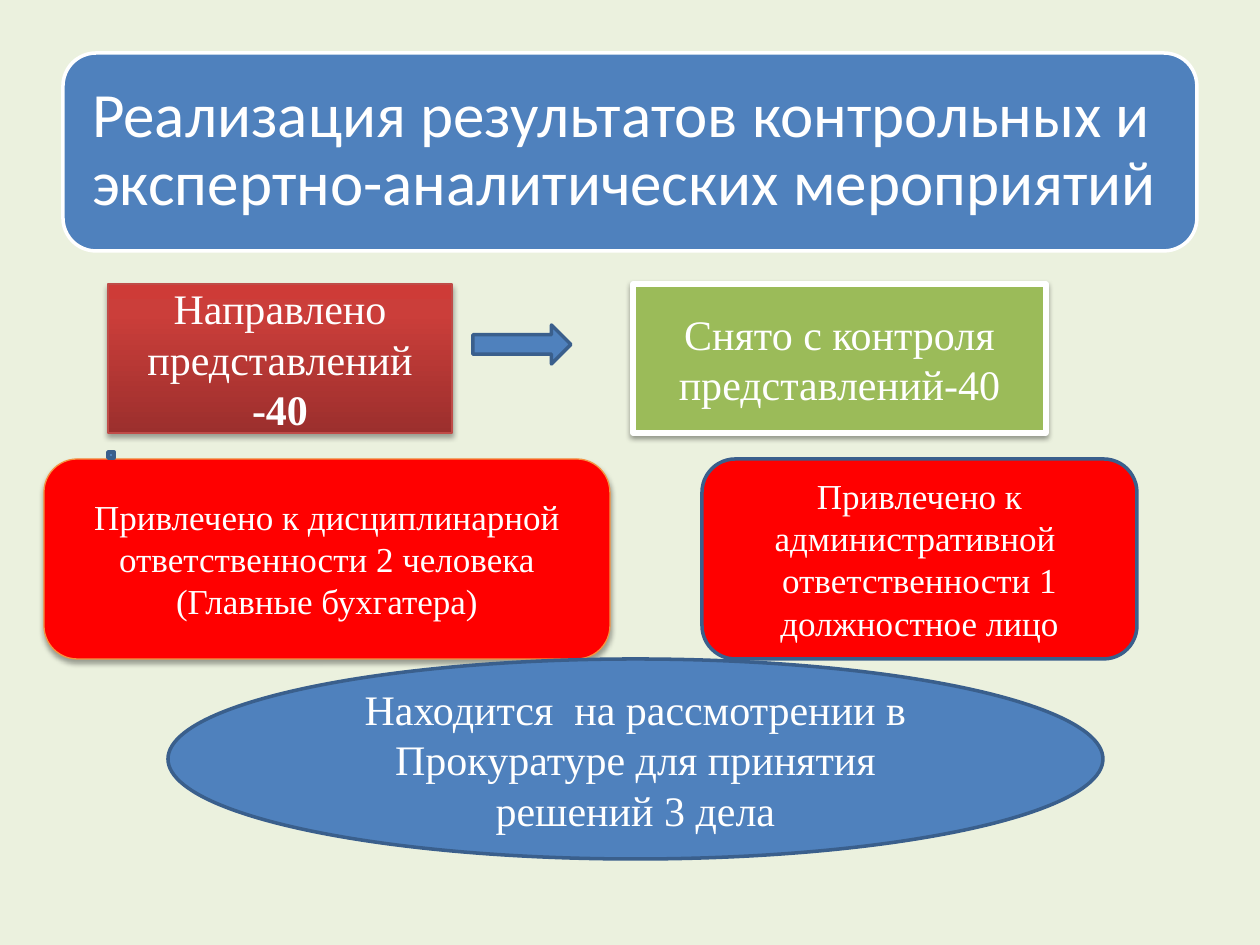
"""Build the slide on the results of control and expert-analytical measures."""
import copy
from dataclasses import dataclass
from typing import Any, Optional

import lxml.etree
import pptx
import pptx.dml.color
import pptx.enum.shapes
import pptx.enum.text
import pptx.oxml
import pptx.oxml.ns
import pptx.util

RGBColor = pptx.dml.color.RGBColor
Shape = pptx.enum.shapes.MSO_SHAPE
Align = pptx.enum.text.PP_ALIGN
qn = pptx.oxml.ns.qn

PX_PER_INCH = 126
WHITE = RGBColor(0xFF, 0xFF, 0xFF)
CREAM = RGBColor(0xEB, 0xF1, 0xDE)
BLUE = RGBColor(0x4F, 0x81, 0xBD)
NAVY = RGBColor(0x3A, 0x5F, 0x8C)
GREEN = RGBColor(0x9B, 0xBB, 0x59)
RED = RGBColor(0xFF, 0x00, 0x00)
ORANGE = RGBColor(0xF6, 0x92, 0x40)
BRICK = RGBColor(0xBF, 0x4C, 0x48)
BRICK_STOPS = (
    (0.0, RGBColor(0x9C, 0x2F, 0x2D)),
    (0.8, RGBColor(0xCB, 0x3E, 0x3A)),
    (1.0, RGBColor(0xCE, 0x3B, 0x37)),
)


@dataclass(frozen=True)
class Run:
    text: str
    bold: bool = False


@dataclass(frozen=True)
class Shadow:
    opacity: int
    blur: float
    distance: float


@dataclass(frozen=True)
class Block:
    kind: Any
    box: tuple[int, int, int, int]
    fill: Any = BLUE
    line: RGBColor = NAVY
    line_width: float = 2
    runs: tuple[Run, ...] = ()
    size: int = 24
    shadow: Optional[Shadow] = None


SOFT = Shadow(35, 3.1, 1.8)
FIRM = Shadow(38, 3.1, 1.6)
ROW_1, ROW_2, ROW_3 = (284, 149), (459, 200), (659, 200)

TITLE = Block(Shape.ROUNDED_RECTANGLE, (63, 53, 1134, 198), line=WHITE)
TITLE_BOX = (73, 62, 1115, 178)
TITLE_TEXT = "Реализация результатов контрольных и экспертно-аналитических мероприятий"

BLOCKS = (
    Block(Shape.RECTANGLE, (108, ROW_1[0], 344, ROW_1[1]), BRICK_STOPS, BRICK, 0.75,
          (Run("Направлено представлений"), Run(" -40", True)), shadow=SOFT),
    Block(Shape.RIGHT_ARROW, (473, 325, 98, 39)),
    Block(Shape.RECTANGLE, (633, ROW_1[0], 413, ROW_1[1]), GREEN, WHITE, 3,
          (Run("Снято с контроля представлений-40"),), shadow=FIRM),
    Block(Shape.ROUNDED_RECTANGLE, (44, ROW_2[0], 566, ROW_2[1]), RED, ORANGE, 0.75,
          (Run("Привлечено к дисциплинарной ответственности 2 человека (Главные бухгатера)"),),
          20, SOFT),
    Block(Shape.OVAL, (168, ROW_3[0], 935, ROW_3[1]),
          runs=(Run("Находится  на рассмотрении в Прокуратуре для принятия решений 3 дела"),)),
    Block(Shape.RECTANGLE, (108, 452, 6, 6)),
    Block(Shape.ROUNDED_RECTANGLE, (702, ROW_2[0], 435, ROW_2[1]), RED,
          runs=(Run("Привлечено к административной  ответственности 1 должностное лицо"),),
          size=20),
)


def px(n: int) -> int:
    """Turn pixels into EMU."""
    return round(n * 914400 / PX_PER_INCH)


def set_gradient(fill: Any, stops: tuple) -> None:
    """Fill upwards with the given positions and colours."""
    fill.gradient()
    fill.gradient_angle = 90
    gs_lst = fill._xPr.find(".//" + qn("a:gsLst"))
    template = copy.deepcopy(gs_lst[0])
    for gs in list(gs_lst):
        gs_lst.remove(gs)
    for _ in stops:
        gs_lst.append(copy.deepcopy(template))
    for stop, (position, color) in zip(fill.gradient_stops, stops):
        stop.position = position
        stop.color.rgb = color


def add_shadow(sp: Any, shadow: Shadow) -> None:
    """Cast a black shadow straight down."""
    effects = sp._element.spPr.find(qn("a:effectLst"))
    outer = lxml.etree.SubElement(
        effects, qn("a:outerShdw"), blurRad=str(pptx.util.Pt(shadow.blur)),
        dist=str(pptx.util.Pt(shadow.distance)), dir="5400000", rotWithShape="0")
    color = lxml.etree.SubElement(outer, qn("a:srgbClr"), val="000000")
    lxml.etree.SubElement(color, qn("a:alpha"), val=str(shadow.opacity * 1000))


def add_text(sp: Any, runs: tuple[Run, ...], size: int, font: str, align: Any) -> Any:
    """Write one white paragraph, centred vertically, and return it."""
    tf = sp.text_frame
    tf.word_wrap = True
    tf.vertical_anchor = pptx.enum.text.MSO_ANCHOR.MIDDLE
    p = tf.paragraphs[0]
    p.alignment = align
    for run in runs:
        r = p.add_run()
        r.text = run.text
        r.font.name = font
        r.font.size = pptx.util.Pt(size)
        r.font.bold = run.bold
        r.font.color.rgb = WHITE
    return p


def add_block(shapes: Any, block: Block) -> None:
    """Draw one block with its outline, shadow and text."""
    sp = shapes.add_shape(block.kind, *map(px, block.box))
    sp.shadow.inherit = False
    if isinstance(block.fill, RGBColor):
        sp.fill.solid()
        sp.fill.fore_color.rgb = block.fill
    else:
        set_gradient(sp.fill, block.fill)
    sp.line.color.rgb = block.line
    sp.line.width = pptx.util.Pt(block.line_width)
    if block.shadow:
        add_shadow(sp, block.shadow)
    if block.runs:
        add_text(sp, block.runs, block.size, "Times New Roman", Align.CENTER)


def add_title(shapes: Any) -> None:
    """Group the title panel with its text."""
    group = shapes.add_group_shape()
    add_block(group.shapes, TITLE)
    sp = group.shapes.add_textbox(*map(px, TITLE_BOX))
    tf = sp.text_frame
    tf.margin_left = tf.margin_right = tf.margin_top = tf.margin_bottom = px(19)
    p = add_text(sp, (Run(TITLE_TEXT),), 36, "Calibri", Align.LEFT)
    p.line_spacing = 0.9


def main() -> None:
    """Build and save the presentation."""
    prs = pptx.Presentation()
    prs.slide_width, prs.slide_height = px(1260), px(945)
    s = prs.slides.add_slide(prs.slide_layouts[6])
    s.background.fill.solid()
    s.background.fill.fore_color.rgb = CREAM
    add_title(s.shapes)
    for block in BLOCKS:
        add_block(s.shapes, block)
    prs.save("out.pptx")


if __name__ == "__main__":
    main()
